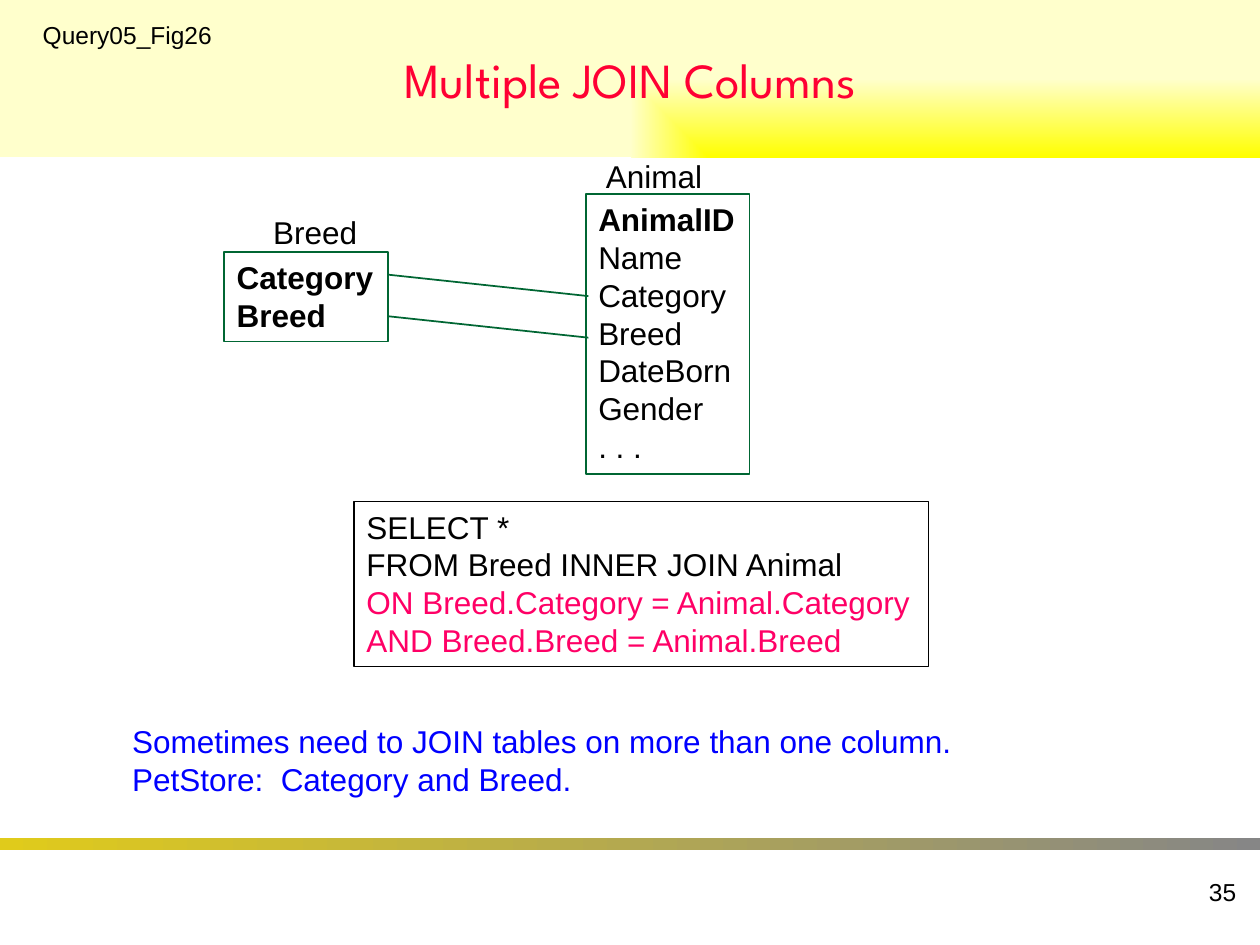
from lxml.etree import SubElement
from pptx import Presentation
from pptx.dml.color import RGBColor
from pptx.enum.shapes import MSO_CONNECTOR, MSO_SHAPE
from pptx.enum.text import MSO_ANCHOR as Anchor, MSO_AUTO_SIZE as AutoSize, PP_ALIGN as Align
from pptx.oxml.ns import qn
from pptx.util import Inches, Pt

BLACK = RGBColor(0x00, 0x00, 0x00)
RED = RGBColor(0xFF, 0x00, 0x33)
PINK = RGBColor(0xFF, 0x00, 0x66)
BLUE = RGBColor(0x00, 0x00, 0xFF)
GREEN = RGBColor(0x00, 0x66, 0x33)
YELLOW = RGBColor(0xFF, 0xFF, 0x00)
CREAM = RGBColor(0xFF, 0xFF, 0xCC)
GOLD = RGBColor(0xE0, 0xCB, 0x1B)
GRAY = RGBColor(0x86, 0x86, 0x86)

WIDTH, HEIGHT = 10, 7.5
TABLE_WIDTH = 1.3
BREED_LEFT, BREED_TOP = 1.78, 2
ANIMAL_LEFT, ANIMAL_TOP = 4.65, 1.54
JOIN_TOP, JOIN_STEP, JOIN_DROP = 2.18, 0.33, 0.17


def place(shape, left, top, width, height):
    shape.left, shape.top = Inches(left), Inches(top)
    shape.width, shape.height = Inches(width), Inches(height)


def fill_gradient(shape, start, end):
    shape.fill.gradient()
    shape.fill.gradient_angle = 0
    for stop, color, position in zip(shape.fill.gradient_stops, (start, end), (0, 1)):
        stop.color.rgb = color
        stop.position = position


def focus_gradient_bottom_right(shape):
    """Turn the linear gradient into one that spreads from the lower right corner."""
    gradient = shape.element.spPr.find(qn("a:gradFill"))
    gradient.remove(gradient.find(qn("a:lin")))
    spread = SubElement(gradient, qn("a:path"), {"path": "rect"})
    SubElement(spread, qn("a:fillToRect"), {"l": "100000", "t": "100000"})


def write_lines(shape, lines, size=18, color=BLACK, bold_count=0, wrap=False):
    frame = shape.text_frame
    frame.text = "\n".join(lines)
    frame.word_wrap = wrap
    frame.auto_size = AutoSize.SHAPE_TO_FIT_TEXT
    frame.vertical_anchor = Anchor.TOP
    for index, paragraph in enumerate(frame.paragraphs):
        paragraph.alignment = Align.LEFT
        font = paragraph.font
        font.name, font.size, font.bold = "Arial", Pt(size), index < bold_count
        font.color.rgb = color
    return frame


def add_text(slide, box, lines, **style):
    return write_lines(slide.shapes.add_textbox(*map(Inches, box)), lines, **style)


def add_box(slide, box, lines, line_color, **style):
    shape = slide.shapes.add_shape(MSO_SHAPE.RECTANGLE, *map(Inches, box))
    shape.shadow.inherit = False
    shape.fill.background()
    shape.line.color.rgb = line_color
    shape.line.width = Pt(1)
    return write_lines(shape, lines, **style)


def add_join(slide, start, end):
    line = slide.shapes.add_connector(MSO_CONNECTOR.STRAIGHT, *map(Inches, start + end))
    line.line.color.rgb = GREEN
    line.line.width = Pt(1)
    SubElement(line.element.spPr, qn("a:effectLst"))


def add_title(slide, text):
    title = slide.shapes.title
    place(title, 0, 0, WIDTH, HEIGHT / 6)
    fill_gradient(title, YELLOW, CREAM)
    focus_gradient_bottom_right(title)
    title.text_frame.text = text
    title.text_frame.vertical_anchor = Anchor.MIDDLE
    paragraph = title.text_frame.paragraphs[0]
    paragraph.alignment = Align.CENTER
    paragraph.font.name, paragraph.font.size = "League Spartan", Pt(28)
    paragraph.font.color.rgb = RED


def add_footer(slide, number):
    bar = slide.shapes.add_shape(
        MSO_SHAPE.RECTANGLE, 0, Inches(6.65), Inches(WIDTH), Inches(0.1))
    bar.shadow.inherit = False
    bar.line.fill.background()
    fill_gradient(bar, GOLD, GRAY)
    frame = add_text(slide, (7.83, 6.83, 2.08, 0.5), [number], size=14)
    frame.auto_size = AutoSize.NONE
    frame.vertical_anchor = Anchor.MIDDLE
    frame.paragraphs[0].alignment = Align.RIGHT


def main():
    presentation = Presentation()
    presentation.slide_width, presentation.slide_height = Inches(WIDTH), Inches(HEIGHT)
    slide = presentation.slides.add_slide(presentation.slide_layouts[5])

    # Title band, figure name and footer
    add_title(slide, "Multiple JOIN Columns")
    add_text(slide, (0.24, 0.11, 1.55, 0.34), ["Query05_Fig26"], size=14)
    add_footer(slide, "35")

    # The two tables, with key columns in bold
    add_box(slide, (ANIMAL_LEFT, ANIMAL_TOP, TABLE_WIDTH, 2.22),
            ["AnimalID", "Name", "Category", "Breed", "DateBorn", "Gender", ". . ."],
            GREEN, bold_count=1)
    add_box(slide, (BREED_LEFT, BREED_TOP, TABLE_WIDTH, 0.71),
            ["Category", "Breed"], GREEN, bold_count=2)
    add_text(slide, (2.07, 1.64, 0.88, 0.4), ["Breed"])
    add_text(slide, (4.71, 1.2, 0.97, 0.4), ["Animal"])

    # One line for each joined column
    for row in range(2):
        top = JOIN_TOP + row * JOIN_STEP
        add_join(slide, (BREED_LEFT + TABLE_WIDTH, top), (ANIMAL_LEFT + 0.02, top + JOIN_DROP))

    # Query, with the join condition highlighted
    query = add_box(slide, (2.81, 3.98, 4.56, 1.31),
                    ["SELECT *", "FROM Breed INNER JOIN Animal",
                     "ON Breed.Category = Animal.Category",
                     "AND Breed.Breed = Animal.Breed"], BLACK)
    for paragraph in query.paragraphs[2:]:
        paragraph.font.color.rgb = PINK

    # Remark
    add_text(slide, (0.95, 5.68, 8.17, 0.71),
             ["Sometimes need to JOIN tables on more than one column.",
              "PetStore:  Category and Breed."], color=BLUE, wrap=True)

    presentation.save("out.pptx")


if __name__ == "__main__":
    main()
